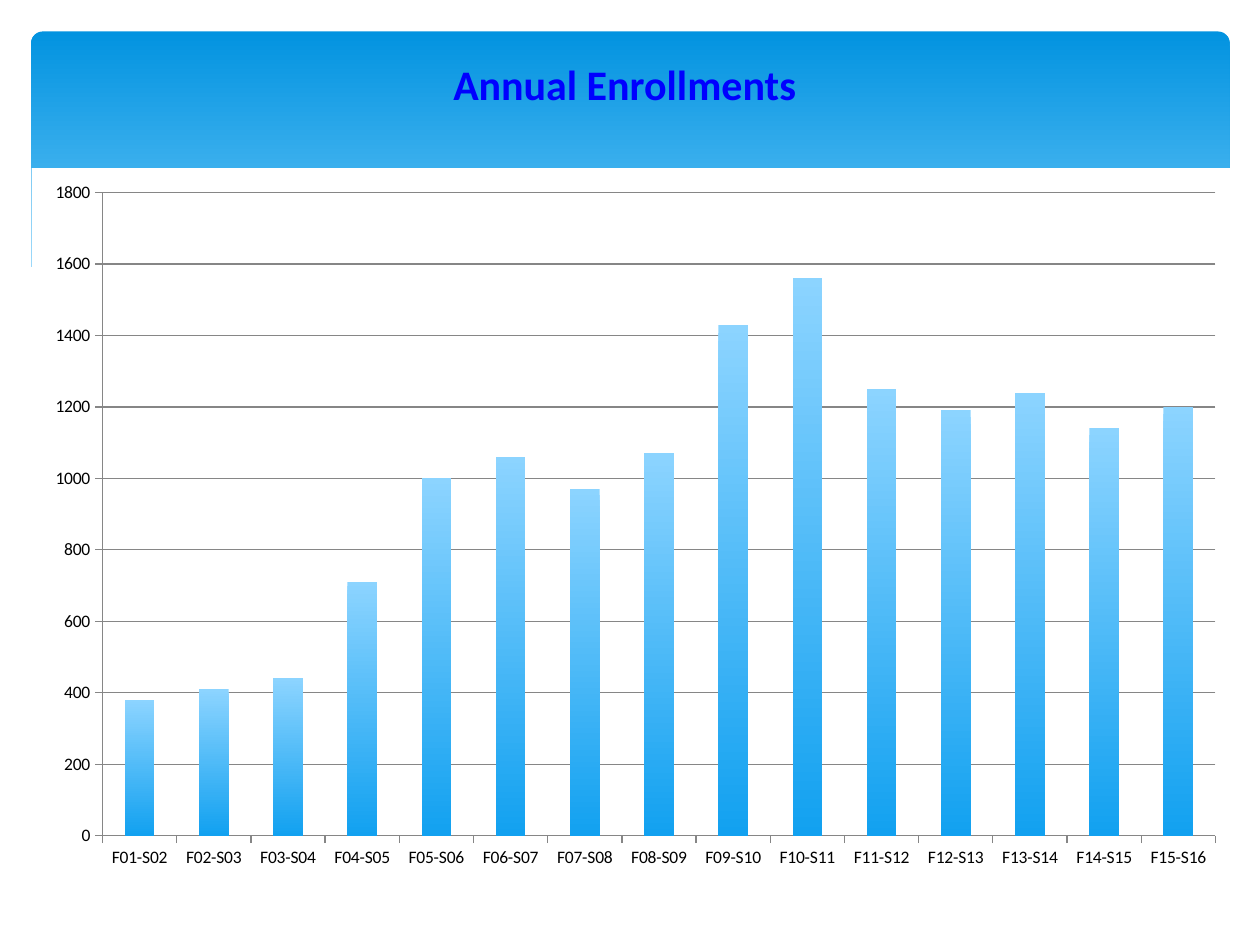
from lxml import etree
from pptx import Presentation
from pptx.chart.data import CategoryChartData
from pptx.dml.color import RGBColor
from pptx.enum.chart import XL_CHART_TYPE, XL_TICK_MARK
from pptx.enum.shapes import MSO_SHAPE
from pptx.enum.text import MSO_AUTO_SIZE, PP_ALIGN
from pptx.oxml import parse_xml
from pptx.oxml.ns import nsdecls, qn
from pptx.util import Pt

COLUMNS = XL_CHART_TYPE.COLUMN_CLUSTERED
OUTSIDE = XL_TICK_MARK.OUTSIDE
ROUNDED = MSO_SHAPE.ROUNDED_RECTANGLE
CENTER = PP_ALIGN.CENTER
GROW = MSO_AUTO_SIZE.SHAPE_TO_FIT_TEXT
FONT = "Calibri"


def rgb(value):
    return RGBColor.from_string(value)


def fade_down(fill, top, bottom, end):
    fill.gradient()
    fill.gradient_angle = 270
    for stop, color, position in zip(fill.gradient_stops, (top, bottom), (0, end)):
        stop.color.rgb = rgb(color)
        stop.position = position


prs = Presentation()
prs.slide_width, prs.slide_height = Pt(720), Pt(540)
s = prs.slides.add_slide(prs.slide_layouts[6])

# Header panel, its left edge shows as a hairline beside the chart
sp = s.shapes.add_shape(ROUNDED, Pt(17.8), Pt(18), Pt(684.9), Pt(194.4))
sp.adjustments[0] = 0.034
sp.shadow.inherit = False
sp.line.fill.background()
fade_down(sp.fill, "0293E0", "83D3FE", 0.9)

# White wave that ends the panel
wave = [(703, 177), (677, 186), (647, 194), (612, 198), (571, 199), (523, 196),
        (467, 189), (400, 176), (322, 158), (263, 145), (210, 137), (166, 133),
        (127, 132), (95, 134), (68, 137), (48, 142), (33, 148), (17, 153),
        (17, 237), (703, 237)]
path = s.shapes.build_freeform(Pt(wave[0][0]), Pt(wave[0][1]))
path.add_line_segments([(Pt(x), Pt(y)) for x, y in wave[1:]])
sp = path.convert_to_shape()
sp.shadow.inherit = False
sp.line.fill.background()
sp.fill.solid()
sp.fill.fore_color.rgb = rgb("FFFFFF")

# Title
sp = s.shapes.add_textbox(Pt(96), Pt(30.2), Pt(522), Pt(36))
tf = sp.text_frame
tf.word_wrap = True
tf.auto_size = GROW
p = tf.paragraphs[0]
p.alignment = CENTER
r = p.add_run()
r.text = "Annual Enrollments"
r.font.name, r.font.size, r.font.bold = FONT, Pt(24), True
r.font.color.rgb = rgb("0000FF")

# Enrollment chart, one column per school year
values = [380, 410, 440, 710, 1000, 1060, 970, 1070,
          1430, 1560, 1250, 1190, 1240, 1140, 1200]
data = CategoryChartData()
data.categories = [f"F{y:02d}-S{y + 1:02d}" for y in range(1, len(values) + 1)]
data.add_series("Series 1", values)
left, top, width, height = 18, 96, 689.8, 408
chart = s.shapes.add_chart(COLUMNS, Pt(left), Pt(top), Pt(width), Pt(height), data).chart
chart.has_legend = False
chart.has_title = False
chart.font.name, chart.font.size = FONT, Pt(10)
chart.font.color.rgb = rgb("000000")

plot = chart.plots[0]
plot.gap_width = 150
plot.vary_by_categories = False
fade_down(plot.series[0].format.fill, "8CD4FF", "12A1F0", 1)

# Axes and gridlines
val = chart.value_axis
val.minimum_scale, val.maximum_scale, val.major_unit = 0, 1800, 200
val.has_major_gridlines = True
for axis in (chart.category_axis, val):
    axis.major_tick_mark = OUTSIDE
for line in (chart.category_axis.format.line, val.format.line,
             val.major_gridlines.format.line):
    line.width = Pt(0.75)
    line.color.rgb = rgb("868686")

# White chart background
chart_el = chart._chartSpace.find(qn("c:chart"))
chart_el.addnext(parse_xml(
    f'<c:spPr {nsdecls("c", "a")}><a:solidFill><a:srgbClr val="FFFFFF"/></a:solidFill>'
    '<a:ln><a:noFill/></a:ln></c:spPr>'))

# Fixed inner plot area, as fractions of the chart
area = chart_el.find(qn("c:plotArea"))
for old in area.findall(qn("c:layout")):
    area.remove(old)
layout = etree.Element(qn("c:layout"))
manual = etree.SubElement(layout, qn("c:manualLayout"))
for tag, value in (("layoutTarget", "inner"), ("xMode", "edge"), ("yMode", "edge"),
                   ("x", 40.6 / width), ("y", 14 / height),
                   ("w", 636 / width), ("h", 367.6 / height)):
    etree.SubElement(manual, qn(f"c:{tag}")).set("val", str(value))
area.insert(0, layout)

prs.save("out.pptx")
